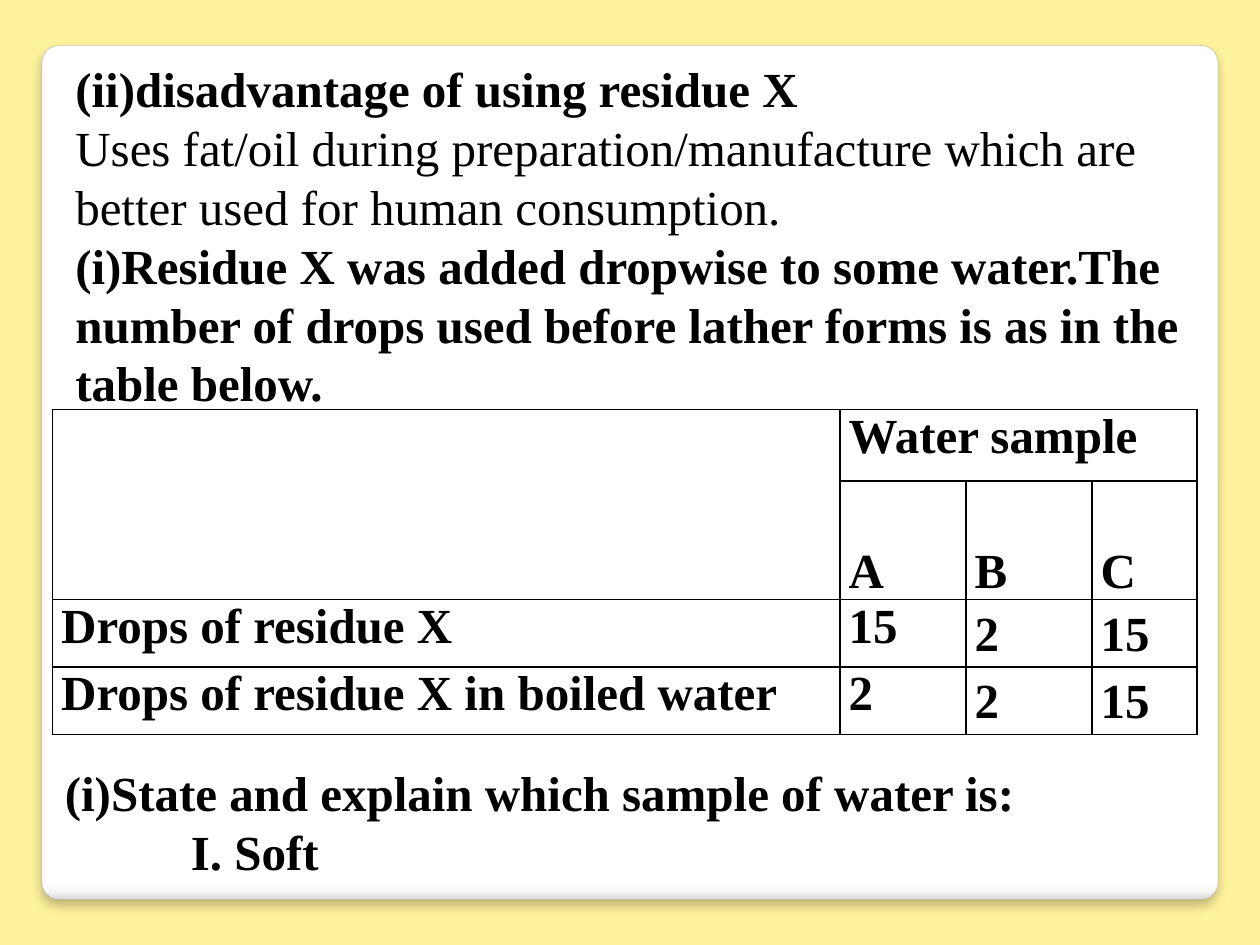
from dataclasses import dataclass

from lxml import etree
from pptx import Presentation
from pptx.dml.color import RGBColor
from pptx.enum.shapes import MSO_SHAPE
from pptx.enum.text import MSO_ANCHOR
from pptx.oxml import parse_xml
from pptx.oxml.ns import nsdecls, qn
from pptx.util import Pt

ROUNDED = MSO_SHAPE.ROUNDED_RECTANGLE
TOP, MIDDLE, BOTTOM = MSO_ANCHOR.TOP, MSO_ANCHOR.MIDDLE, MSO_ANCHOR.BOTTOM


@dataclass(frozen=True)
class Theme:
    font: str = "Times New Roman"
    size: float = 28
    ink: str = "000000"
    page: str = "FFF39D"
    panel_line: str = "A4A4A4"
    panel_stops: tuple = ((0, "FFFFFF"), (98, "FFFFFF"), (99, "F7F7F7"), (100, "DADADA"))


THEME = Theme()


def rgb(value):
    return RGBColor.from_string(value)


def add_run(p, text, bold=True):
    r = p.add_run()
    r.text = text
    r.font.name = THEME.font
    r.font.size = Pt(THEME.size)
    r.font.bold = bold
    r.font.color.rgb = rgb(THEME.ink)


def add_panel(s, left, top, width, height):
    """Rounded panel with a shaded bottom edge and a soft shadow."""
    sp = s.shapes.add_shape(ROUNDED, Pt(left), Pt(top), Pt(width), Pt(height))
    sp.adjustments[0] = 0.02
    sp.line.color.rgb = rgb(THEME.panel_line)
    sp.line.width = Pt(0.16)
    stops = "".join(
        f'<a:gs pos="{pos * 1000}"><a:srgbClr val="{color}"/></a:gs>'
        for pos, color in THEME.panel_stops
    )
    pr = sp._element.spPr
    pr.find(qn("a:prstGeom")).addnext(parse_xml(
        f'<a:gradFill {nsdecls("a")} rotWithShape="1"><a:gsLst>{stops}</a:gsLst>'
        '<a:lin ang="5400000" scaled="0"/></a:gradFill>'
    ))
    pr.append(parse_xml(
        f'<a:effectLst {nsdecls("a")}><a:outerShdw blurRad="{Pt(6)}" dist="{Pt(4)}" '
        f'dir="5400000" algn="t" rotWithShape="0"><a:srgbClr val="{THEME.ink}">'
        '<a:alpha val="25000"/></a:srgbClr></a:outerShdw></a:effectLst>'
    ))


def add_text(s, left, top, width, height, paragraphs, anchor=TOP):
    """Each paragraph is (text, bold, left indent)."""
    tf = s.shapes.add_textbox(Pt(left), Pt(top), Pt(width), Pt(height)).text_frame
    tf.word_wrap = True
    tf.vertical_anchor = anchor
    for i, (text, bold, indent) in enumerate(paragraphs):
        p = tf.add_paragraph() if i else tf.paragraphs[0]
        if indent:
            p._p.get_or_add_pPr().set("marL", str(Pt(indent)))
        add_run(p, text, bold)


def add_borders(cell):
    pr = cell._tc.get_or_add_tcPr()
    for i, side in enumerate(("lnL", "lnR", "lnT", "lnB")):
        ln = etree.Element(qn(f"a:{side}"), w=str(Pt(1)))
        fill = etree.SubElement(ln, qn("a:solidFill"))
        etree.SubElement(fill, qn("a:srgbClr"), val=THEME.ink)
        pr.insert(i, ln)


def add_cell_text(cell, text, anchor, spacing):
    cell.vertical_anchor = anchor
    p = cell.text_frame.paragraphs[0]
    p.line_spacing = spacing
    add_run(p, text)


def add_drops_table(s, left, top, widths, heights, rows):
    table = s.shapes.add_table(
        len(heights), len(widths), Pt(left), Pt(top), Pt(sum(widths)), Pt(sum(heights))
    ).table
    table.first_row = table.horz_banding = False
    for column, width in zip(table.columns, widths):
        column.width = Pt(width)
    for row, height in zip(table.rows, heights):
        row.height = Pt(height)
    table.cell(0, 0).merge(table.cell(1, 0))
    table.cell(0, 1).merge(table.cell(0, 3))
    for i, row in enumerate(rows):
        for j, text in enumerate(row):
            cell = table.cell(i, j)
            cell.margin_left = cell.margin_right = Pt(5)
            cell.margin_top = cell.margin_bottom = Pt(0)
            cell.fill.background()
            add_borders(cell)
            if text:
                anchor = BOTTOM if i == 1 else TOP
                add_cell_text(cell, text, anchor, 1.15 if i and j > 1 else 1.0)


def main():
    prs = Presentation()
    prs.slide_width, prs.slide_height = Pt(720), Pt(540)
    s = prs.slides.add_slide(prs.slide_layouts[6])
    s.background.fill.solid()
    s.background.fill.fore_color.rgb = rgb(THEME.page)

    add_panel(s, 24, 26, 672, 488)
    add_text(s, 36, 30, 654, 245, [
        ("(ii)disadvantage of using residue X", True, 0),
        ("Uses fat/oil during preparation/manufacture which are better used "
         "for human consumption.", False, 0),
        ("(i)Residue X was added dropwise to some water.The number of drops used "
         "before lather forms is as in the table below.", True, 0),
    ])
    add_drops_table(s, 30, 234, (450, 72, 72, 60), (41, 67.5, 38.5, 38.5), [
        ("", "Water sample", "", ""),
        ("", "A", "B", "C"),
        ("Drops of residue X", "15", "2", "15"),
        ("Drops of residue X in boiled water", "2", "2", "15"),
    ])
    add_text(s, 30, 432, 660, 75, [
        ("(i)State and explain which sample of water is:", True, 0),
        ("I. Soft", True, 72),
    ], MIDDLE)
    prs.save("out.pptx")


if __name__ == "__main__":
    main()
